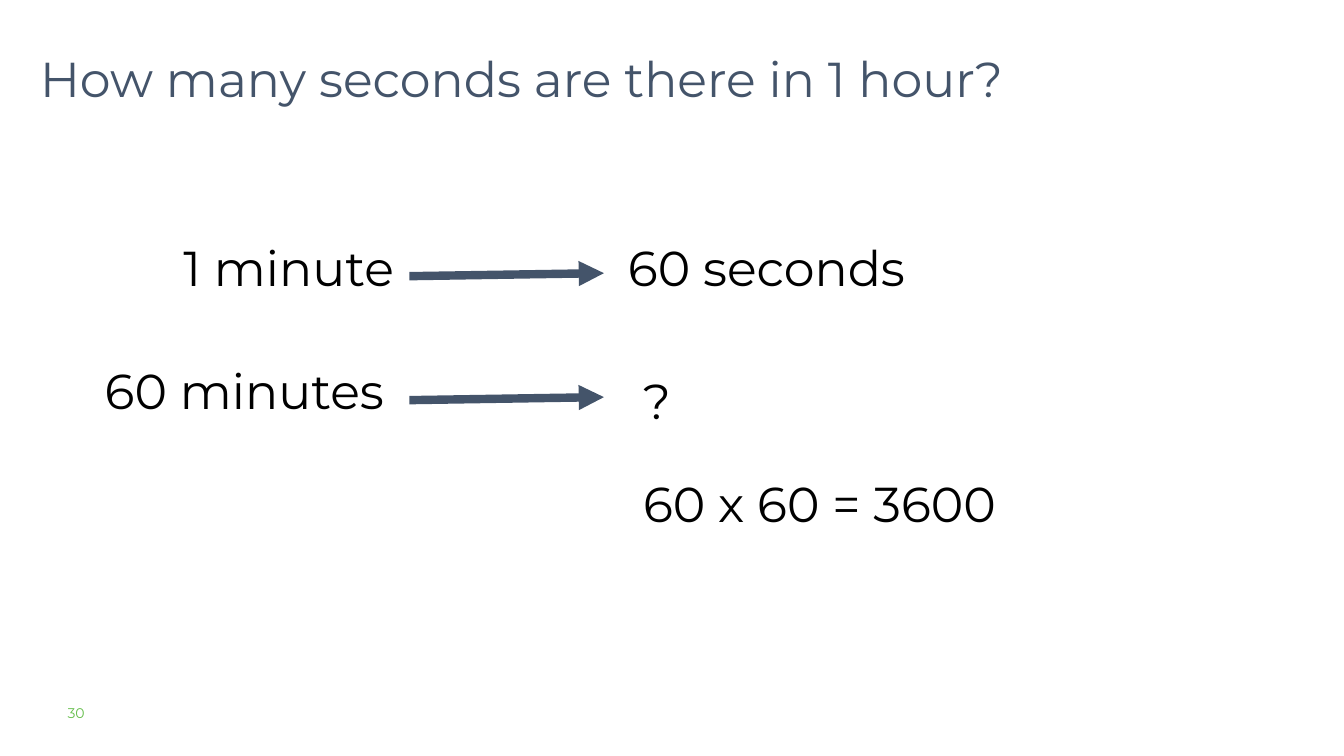
from lxml import etree
from pptx import Presentation
from pptx import util as u
from pptx.dml.color import RGBColor
from pptx.enum import shapes, text
from pptx.oxml import ns

COLOURS = {"title": "44546A", "body": "000000", "arrow": "44546A", "number": "65BE4B"}
FONT = "Montserrat"


def add_text(slide, wording, box, colour, size=35, inset=(0.1, 0.1), spacing=None):
    shape = slide.shapes.add_textbox(*map(u.Inches, box))
    frame = shape.text_frame
    side, end = map(u.Inches, inset)
    frame_format = {
        "word_wrap": True, "vertical_anchor": text.MSO_ANCHOR.TOP,
        "margin_left": side, "margin_right": side,
        "margin_top": end, "margin_bottom": end,
    }
    for name, value in frame_format.items():
        setattr(frame, name, value)

    paragraph = frame.paragraphs[0]
    paragraph.line_spacing = spacing
    run = paragraph.add_run()
    run.text = wording
    for name, value in {"name": FONT, "size": u.Pt(size)}.items():
        setattr(run.font, name, value)
    run.font.color.rgb = RGBColor.from_string(COLOURS[colour])


def add_arrow(slide, start, end):
    arrow = slide.shapes.add_connector(
        shapes.MSO_CONNECTOR.STRAIGHT, *map(u.Inches, start + end))
    arrow.line.width = u.Pt(6)
    arrow.line.color.rgb = RGBColor.from_string(COLOURS["arrow"])
    # Arrowhead at the end, no shadow
    line = arrow.line._get_or_add_ln()
    etree.SubElement(line, ns.qn("a:tailEnd"), type="triangle")
    etree.SubElement(arrow._element.spPr, ns.qn("a:effectLst"))


def main():
    presentation = Presentation()
    presentation.slide_width = u.Inches(13.33)
    presentation.slide_height = u.Inches(7.5)
    slide = presentation.slides.add_slide(presentation.slide_layouts[6])

    # Title and slide number
    add_text(slide, "How many seconds are there in 1 hour?",
             (0.3, 0.26, 10.47, 0.84), "title", inset=(0.1, 0.05), spacing=1.3)
    add_text(slide, "30", (0.67, 6.99, 1.05, 0.26), "number", size=10, inset=(0, 0))

    # Minutes on the left, seconds and the working on the right
    for wording, box in [
        ("1 minute", (1.72, 2.26, 2.39, 0.93)),
        ("60 seconds", (6.13, 2.26, 3.47, 0.93)),
        ("60 minutes", (0.94, 3.48, 3.3, 0.93)),
        ("?", (6.28, 3.58, 2.39, 0.93)),
        ("60 x 60 = 3600", (6.28, 4.6, 5.06, 0.84)),
    ]:
        add_text(slide, wording, box, "body")

    # Arrows from minutes to seconds
    for top in (2.71, 3.94):
        add_arrow(slide, (4.06, top + 0.03), (5.99, top))

    presentation.save("out.pptx")


if __name__ == "__main__":
    main()
